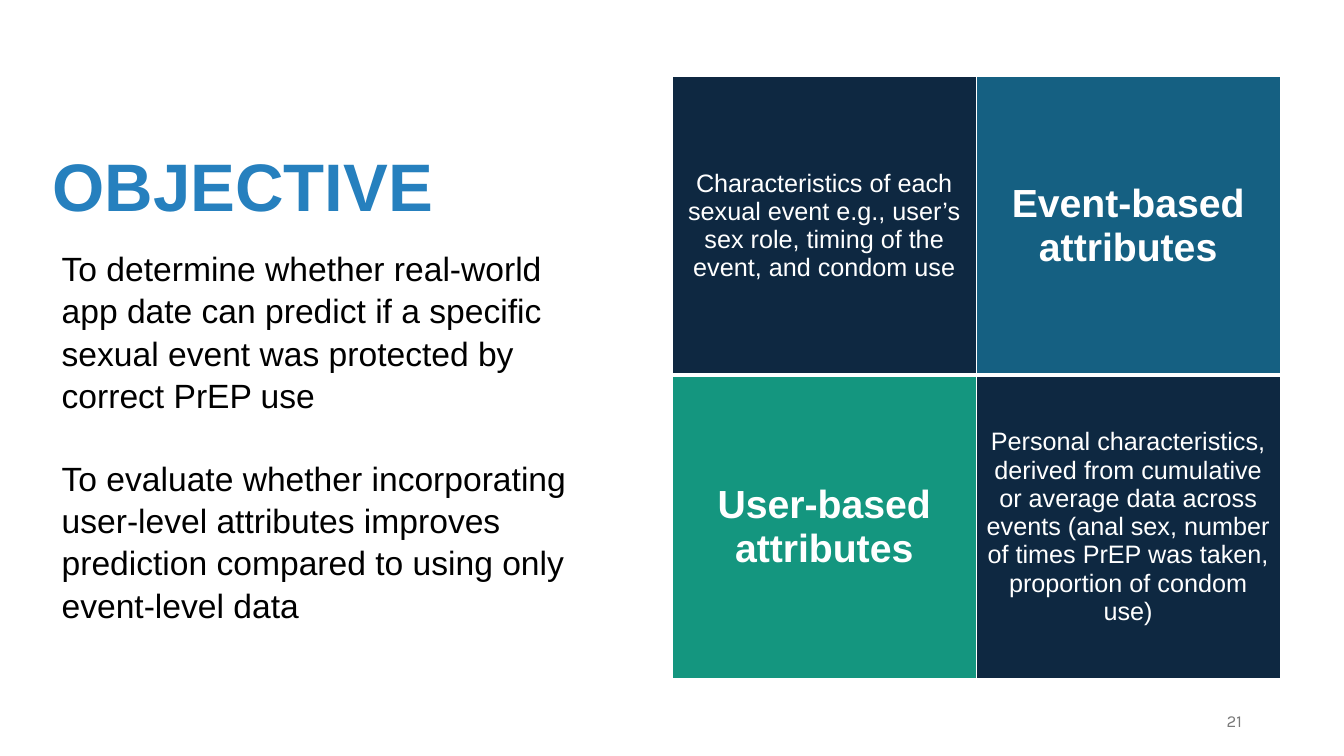
from dataclasses import dataclass

from lxml import etree
from pptx import Presentation
from pptx.dml.color import RGBColor
from pptx.enum.text import MSO_ANCHOR, MSO_AUTO_SIZE, PP_ALIGN
from pptx.oxml.ns import qn
from pptx.util import Cm, Pt

LEFT, CENTER, RIGHT = PP_ALIGN.LEFT, PP_ALIGN.CENTER, PP_ALIGN.RIGHT
TOP, MIDDLE, BOTTOM = MSO_ANCHOR.TOP, MSO_ANCHOR.MIDDLE, MSO_ANCHOR.BOTTOM
FIXED_SIZE = MSO_AUTO_SIZE.NONE

COLORS = {
    "title": "2680BE",
    "body": "000000",
    "number": "797979",
    "white": "FFFFFF",
    "navy": "0E2841",
    "blue": "156082",
    "green": "14967F",
}
COLUMN_WIDTH = 7.66
ROW_HEIGHTS = (7.52, 7.65)
THIN, THICK = 1, 3


@dataclass
class TextStyle:
    size: int
    color: str
    bold: bool = False
    font: str = "Arial"
    align: PP_ALIGN = LEFT


@dataclass
class Quadrant:
    text: str
    fill: str
    style: TextStyle


TITLE = TextStyle(48, "title", bold=True)
BODY = TextStyle(24, "body")
NUMBER = TextStyle(12, "number", font="Karla", align=RIGHT)
DETAIL = TextStyle(18, "white", align=CENTER)
HEADING = TextStyle(28, "white", bold=True, align=CENTER)

OBJECTIVES = (
    "To determine whether real-world app date can predict if a specific "
    "sexual event was protected by correct PrEP use",
    "To evaluate whether incorporating user-level attributes improves "
    "prediction compared to using only event-level data",
)
QUADRANTS = (
    (
        Quadrant("Characteristics of each sexual event e.g., user’s sex role, "
                 "timing of the event, and condom use", "navy", DETAIL),
        Quadrant("Event-based attributes", "blue", HEADING),
    ),
    (
        Quadrant("User-based attributes", "green", HEADING),
        Quadrant("Personal characteristics, derived from cumulative or average "
                 "data across events (anal sex, number of times PrEP was taken, "
                 "proportion of condom use)", "navy", DETAIL),
    ),
)


def color(name: str) -> RGBColor:
    return RGBColor.from_string(COLORS[name])


def write(paragraph, text: str, style: TextStyle) -> None:
    paragraph.alignment = style.align
    run = paragraph.add_run()
    run.text = text
    run.font.name = style.font
    run.font.size = Pt(style.size)
    run.font.bold = style.bold
    run.font.color.rgb = color(style.color)


def place(shape, left: float, top: float, width: float, height: float, anchor: MSO_ANCHOR):
    shape.left, shape.top = Cm(left), Cm(top)
    shape.width, shape.height = Cm(width), Cm(height)
    frame = shape.text_frame
    frame.word_wrap = True
    frame.auto_size = FIXED_SIZE
    frame.vertical_anchor = anchor
    return frame


def add_borders(cell, widths: dict[str, int]) -> None:
    properties = cell._tc.get_or_add_tcPr()
    for index, (side, width) in enumerate(widths.items()):
        line = etree.Element(qn(f"a:ln{side}"), w=str(Pt(width)))
        fill = etree.SubElement(line, qn("a:solidFill"))
        etree.SubElement(fill, qn("a:srgbClr"), val=COLORS["white"])
        properties.insert(index, line)


def add_objectives(frame) -> None:
    for index, text in enumerate(OBJECTIVES):
        paragraph = frame.paragraphs[0] if index == 0 else frame.add_paragraph()
        properties = paragraph._p.get_or_add_pPr()
        properties.set("marL", "0")
        properties.set("indent", "0")
        etree.SubElement(properties, qn("a:buNone"))
        paragraph.line_spacing = 1.05
        paragraph.space_before = Pt(29 if index else 0)
        write(paragraph, text, BODY)


def add_quadrants(slide) -> None:
    table = slide.shapes.add_table(
        2, 2, Cm(16.94), Cm(1.93), Cm(2 * COLUMN_WIDTH), Cm(sum(ROW_HEIGHTS))
    ).table
    table.first_row = table.horz_banding = False
    for column in table.columns:
        column.width = Cm(COLUMN_WIDTH)
    for row_index, row in enumerate(QUADRANTS):
        table.rows[row_index].height = Cm(ROW_HEIGHTS[row_index])
        for column_index, quadrant in enumerate(row):
            cell = table.cell(row_index, column_index)
            cell.fill.solid()
            cell.fill.fore_color.rgb = color(quadrant.fill)
            cell.vertical_anchor = MIDDLE
            write(cell.text_frame.paragraphs[0], quadrant.text, quadrant.style)
            # The rule between the two rows is the heavy one
            add_borders(cell, {
                "L": THIN,
                "R": THIN,
                "T": THICK if row_index == 1 else THIN,
                "B": THICK if row_index == 0 else THIN,
            })


def main() -> None:
    presentation = Presentation()
    presentation.slide_width, presentation.slide_height = Cm(33.87), Cm(19.05)
    slide = presentation.slides.add_slide(presentation.slide_layouts[1])

    # Title and objectives
    title = place(slide.shapes.title, 1.07, 3.48, 14.96, 2.31, BOTTOM)
    write(title.paragraphs[0], "OBJECTIVE", TITLE)
    add_objectives(place(slide.placeholders[1], 1.3, 6.07, 13.84, 9.5, TOP))

    # Attribute quadrants
    add_quadrants(slide)

    # Slide number
    number_box = slide.shapes.add_textbox(0, 0, 0, 0)
    number = place(number_box, 23.93, 17.65, 7.62, 1.02, MIDDLE)
    write(number.paragraphs[0], "21", NUMBER)

    presentation.save("out.pptx")


if __name__ == "__main__":
    main()
